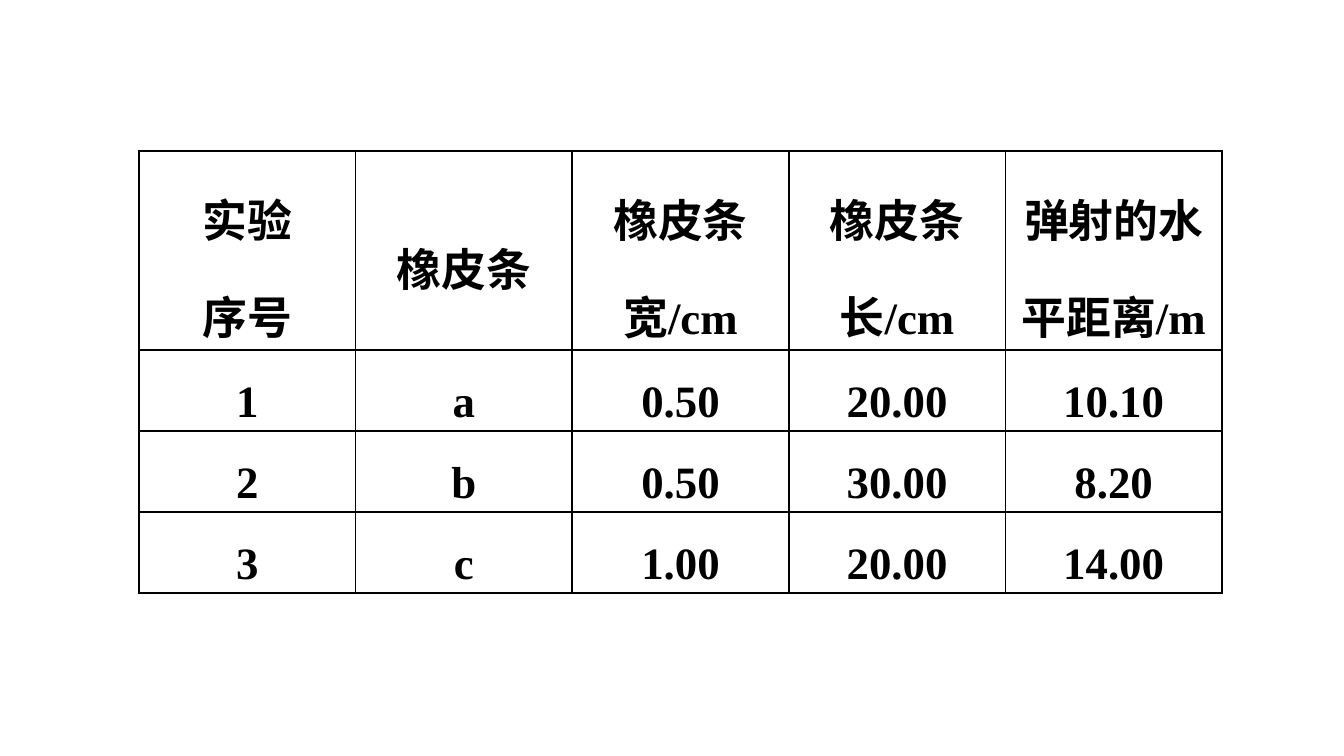
import dataclasses

import lxml.etree
import pptx
import pptx.dml.color
import pptx.enum.text
import pptx.oxml.ns
import pptx.util

EMU_PER_PX = 914400 / 134.4
BLACK = "000000"
FONT = "Times New Roman"


@dataclasses.dataclass(frozen=True)
class Entry:
    lines: tuple[str, ...]
    hanging: bool = True


def px(n: float) -> pptx.util.Emu:
    return pptx.util.Emu(round(n * EMU_PER_PX))


def color(value: str) -> pptx.dml.color.RGBColor:
    return pptx.dml.color.RGBColor.from_string(value)


def add_borders(cell, value: str, width: int) -> None:
    tc_pr = cell._tc.get_or_add_tcPr()
    qn = pptx.oxml.ns.qn
    for side in ("a:lnL", "a:lnR", "a:lnT", "a:lnB"):
        ln = lxml.etree.SubElement(tc_pr, qn(side), w=str(width))
        fill = lxml.etree.SubElement(ln, qn("a:solidFill"))
        lxml.etree.SubElement(fill, qn("a:srgbClr"), val=value)


def fill_cell(cell, entry: Entry) -> None:
    cell.margin_left = cell.margin_right = px(7)
    cell.margin_top = cell.margin_bottom = 0
    cell.vertical_anchor = pptx.enum.text.MSO_ANCHOR.MIDDLE
    add_borders(cell, BLACK, pptx.util.Pt(1))
    cell.fill.background()
    tf = cell.text_frame
    for i, line in enumerate(entry.lines):
        p = tf.add_paragraph() if i else tf.paragraphs[0]
        p.alignment = pptx.enum.text.PP_ALIGN.CENTER
        p.line_spacing = 1.5
        if entry.hanging:
            p_pr = p._p.get_or_add_pPr()
            p_pr.set("marL", str(px(52)))
            p_pr.set("indent", str(-px(52)))
        r = p.add_run()
        r.text = line
        r.font.name = FONT
        r.font.size = pptx.util.Pt(24)
        r.font.bold = True
        r.font.color.rgb = color(BLACK)


HEADER = [
    Entry(("实验", "序号")),
    Entry(("橡皮条",)),
    Entry(("橡皮条", "宽/cm")),
    Entry(("橡皮条", "长/cm")),
    Entry(("弹射的水平距离/m",), hanging=False),
]
TRIALS = [
    ("1", "a", "0.50", "20.00", "10.10"),
    ("2", "b", "0.50", "30.00", "8.20"),
    ("3", "c", "1.00", "20.00", "14.00"),
]
TABLE_WIDTH = 1083
HEADER_HEIGHT = 199
ROW_HEIGHT = 81


def main() -> None:
    prs = pptx.Presentation()
    prs.slide_width, prs.slide_height = px(1344), px(756)
    s = prs.slides.add_slide(prs.slide_layouts[6])

    # Table grid: equal columns, a tall header and equal trial rows
    rows = [HEADER] + [[Entry((text,)) for text in trial] for trial in TRIALS]
    heights = [HEADER_HEIGHT] + [ROW_HEIGHT] * len(TRIALS)
    table = s.shapes.add_table(
        len(rows), len(HEADER), px(139), px(151), px(TABLE_WIDTH), px(sum(heights))
    ).table
    table.first_row = table.horz_banding = False
    for column in table.columns:
        column.width = px(TABLE_WIDTH / len(HEADER))

    # Experiment data
    for row, height, entries in zip(table.rows, heights, rows):
        row.height = px(height)
        for cell, entry in zip(row.cells, entries):
            fill_cell(cell, entry)

    prs.save("out.pptx")


if __name__ == "__main__":
    main()
